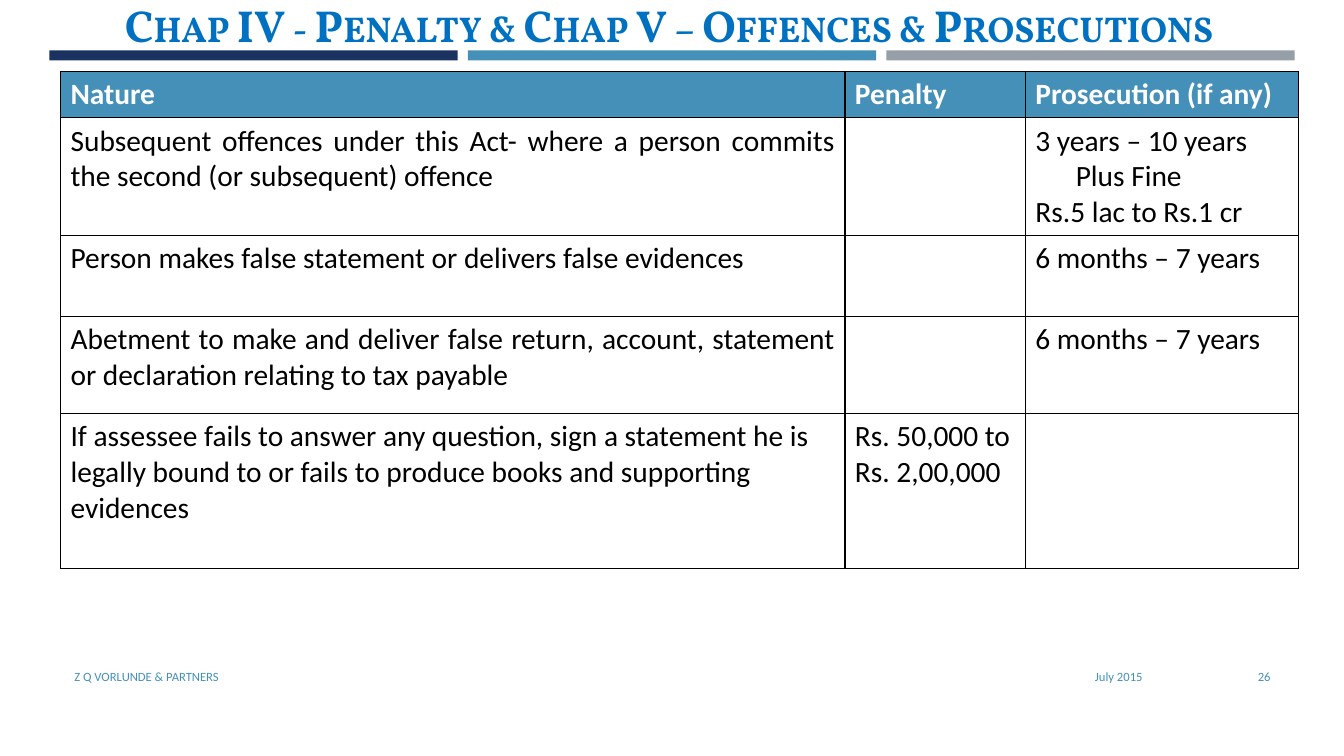
from lxml import etree
from pptx import Presentation, util as u
from pptx.dml.color import RGBColor
from pptx.enum import shapes, text
from pptx.oxml.ns import qn

WIDE, HIGH = 13.33, 7.5
INK = {"navy": "1A3260", "blue": "4590B8", "grey": "969FA7", "title": "0070C0",
       "black": "000000", "white": "FFFFFF"}
ALIGN = {"l": text.PP_ALIGN.LEFT, "c": text.PP_ALIGN.CENTER,
         "r": text.PP_ALIGN.RIGHT, "j": text.PP_ALIGN.JUSTIFY}
COLS = [7.78, 1.79, 2.71]
ROWS = [0.46, 1.15, 0.8, 0.96, 1.54]
CELLS = [
    ["Nature", "Penalty", "Prosecution (if any)"],
    ["Subsequent offences under this Act- where a person commits the second (or subsequent) offence",
     "", "3 years – 10 years\nPlus Fine\nRs.5 lac to Rs.1 cr"],
    ["Person makes false statement or delivers false evidences", "", "6 months – 7 years"],
    ["Abetment to make and deliver false return, account, statement or declaration relating to tax payable",
     "", "6 months – 7 years"],
    ["If assessee fails to answer any question, sign a statement he is legally bound to or fails to "
     "produce books and supporting evidences", "Rs. 50,000 to Rs. 2,00,000", ""],
]


def inches(box):
    return [u.Inches(n) for n in box]


def tint(ink):
    return RGBColor.from_string(INK[ink])


def write(frame, words, ink, align="l", size=21, font="Calibri", bold=False):
    frame.word_wrap = True
    for i, line in enumerate(words.split("\n")):
        para = frame.paragraphs[0] if i == 0 else frame.add_paragraph()
        para.alignment = ALIGN[align]
        run = para.add_run()
        run.text = line
        for key, val in {"size": u.Pt(size), "name": font, "bold": bold}.items():
            setattr(run.font, key, val)
        run.font.color.rgb = tint(ink)
    return frame.paragraphs


def label(slide, box, words, ink, anchor="MIDDLE", **style):
    frame = slide.shapes.add_textbox(*inches(box)).text_frame
    frame.vertical_anchor = text.MSO_ANCHOR[anchor]
    return write(frame, words, ink, **style)[0]


def head(slide, box):
    para = label(slide, box, "Chap IV - Penalty & Chap V – Offences & Prosecutions", "title",
                 "TOP", align="c", size=32, font="Vollkorn", bold=True)
    para.line_spacing = 0.9
    para.runs[0].font._element.set("cap", "small")


def bars(slide, box, gap=0.1):
    left, top, wide, high = box
    step = (wide + gap) / 3
    for i, ink in enumerate(["navy", "blue", "grey"]):
        bar = slide.shapes.add_shape(shapes.MSO_SHAPE.RECTANGLE,
                                     *inches([left + i * step, top, step - gap, high]))
        bar.shadow.inherit = False
        bar.fill.solid()
        bar.fill.fore_color.rgb = tint(ink)
        bar.line.fill.background()


def border(cell):
    props = cell._tc.get_or_add_tcPr()
    for side in "LRTB":
        line = etree.SubElement(props, qn(f"a:ln{side}"), w=str(u.Pt(1)))
        fill = etree.SubElement(line, qn("a:solidFill"))
        etree.SubElement(fill, qn("a:srgbClr"), val=INK["black"])


def grid(slide, left, top):
    box = inches([left, top, sum(COLS), sum(ROWS)])
    table = slide.shapes.add_table(len(ROWS), len(COLS), *box).table
    for col, wide in zip(table.columns, COLS):
        col.width = u.Inches(wide)
    for r, (row, high) in enumerate(zip(table.rows, ROWS)):
        row.height = u.Inches(high)
        for c, words in enumerate(CELLS[r]):
            cell = table.cell(r, c)
            border(cell)
            cell.fill.solid()
            cell.fill.fore_color.rgb = tint("white" if r else "blue")
            if words:
                write(cell.text_frame, words, "black" if r else "white",
                      align="j" if c == 0 and r in (1, 2, 3) else "l", bold=r == 0)
    fine = table.cell(1, 2).text_frame.paragraphs[1]
    fine._p.get_or_add_pPr().set("marL", str(u.Inches(0.4)))


def foot(slide, top, high):
    for left, wide, words, align in [(0.64, 7.56, "Z Q VORLUNDE & PARTNERS", "l"),
                                     (8.32, 3.11, "July 2015", "r"),
                                     (11.55, 1.15, "26", "r")]:
        label(slide, [left, top, wide, high], words, "blue", align=align, size=9)


def main():
    deck = Presentation()
    deck.slide_width, deck.slide_height = inches([WIDE, HIGH])
    slide = deck.slides.add_slide(deck.slide_layouts[6])
    bars(slide, [0.49, 0.5, 12.35, 0.1])
    grid(slide, 0.6, 0.71)
    head(slide, [0.27, -0.01, 12.73, 0.67])
    foot(slide, 6.51, 0.4)
    deck.save("out.pptx")


if __name__ == "__main__":
    main()
